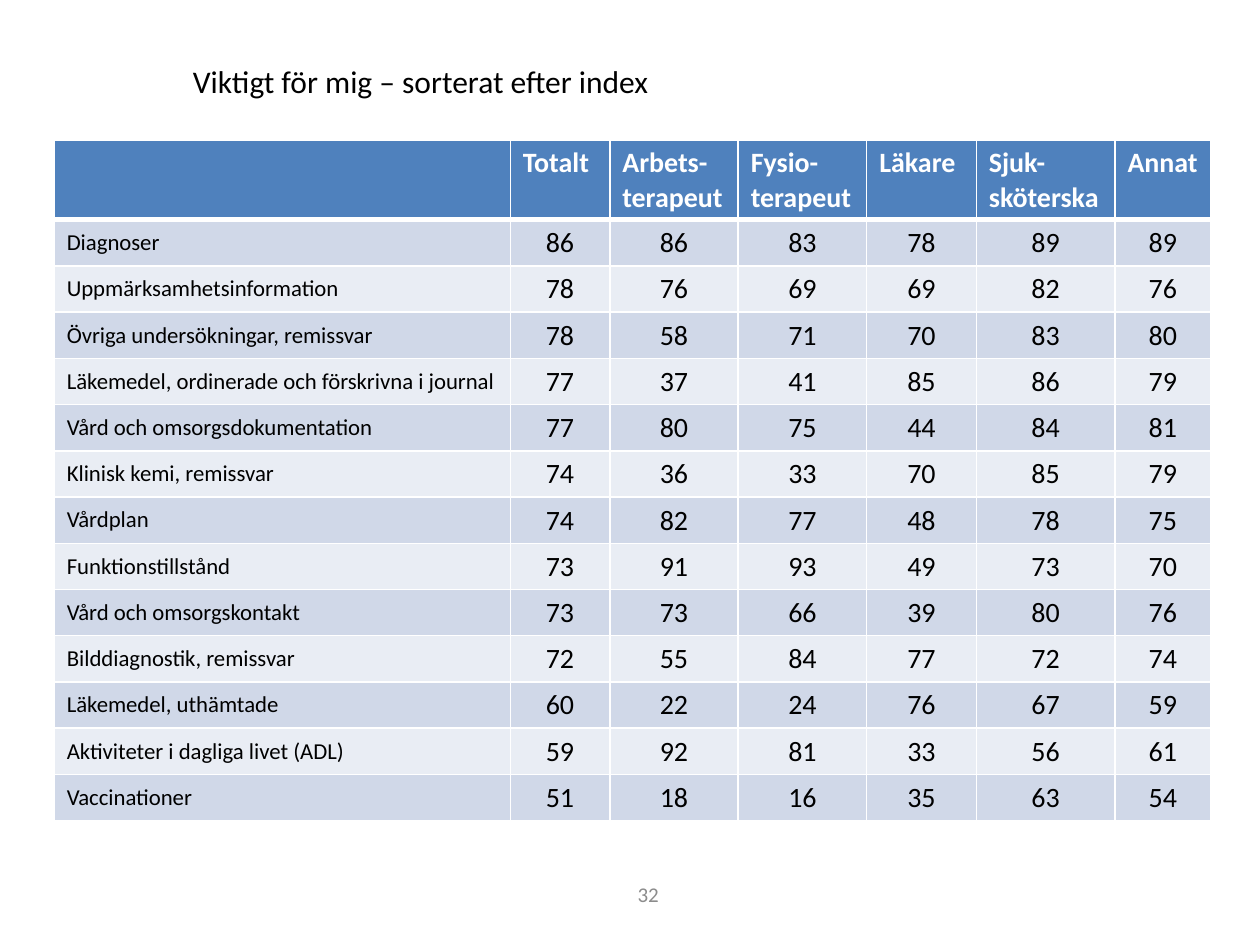
from dataclasses import dataclass

from lxml import etree
from pptx import Presentation
from pptx.dml.color import RGBColor as Rgb
from pptx.enum import text as t
from pptx.oxml import ns
from pptx.util import Inches, Pt


@dataclass(frozen=True)
class Theme:
    font: str = "Calibri"
    white: str = "FFFFFF"
    black: str = "000000"
    grey: str = "8C8C8C"
    blue: str = "4F81BD"
    bands: tuple = ("D0D8E8", "E9EDF4")
    title: float = 18
    cell: float = 16
    label: float = 13
    foot: float = 12


THEME = Theme()
LEFT, MID = t.PP_ALIGN.LEFT, t.PP_ALIGN.CENTER

HEADS = ("", "Totalt", "Arbets-terapeut", "Fysio-terapeut", "Läkare",
         "Sjuk-sköterska", "Annat")
ROWS = (
    ("Diagnoser", 86, 86, 83, 78, 89, 89),
    ("Uppmärksamhetsinformation", 78, 76, 69, 69, 82, 76),
    ("Övriga undersökningar, remissvar", 78, 58, 71, 70, 83, 80),
    ("Läkemedel, ordinerade och förskrivna i journal", 77, 37, 41, 85, 86, 79),
    ("Vård och omsorgsdokumentation", 77, 80, 75, 44, 84, 81),
    ("Klinisk kemi, remissvar", 74, 36, 33, 70, 85, 79),
    ("Vårdplan", 74, 82, 77, 48, 78, 75),
    ("Funktionstillstånd", 73, 91, 93, 49, 73, 70),
    ("Vård och omsorgskontakt", 73, 73, 66, 39, 80, 76),
    ("Bilddiagnostik, remissvar", 72, 55, 84, 77, 72, 74),
    ("Läkemedel, uthämtade", 60, 22, 24, 76, 67, 59),
    ("Aktiviteter i dagliga livet (ADL)", 59, 92, 81, 33, 56, 61),
    ("Vaccinationer", 51, 18, 16, 35, 63, 54),
)
WIDTHS = (3.62, 0.79, 1.02, 1.02, 0.87, 1.1, 0.76)
HIGH, HEAD = 5.4, 0.63  # whole table, heading row


def write(frame, words, size, color, align=LEFT, bold=False):
    frame.text = words
    para = frame.paragraphs[0]
    para.alignment = align
    for font in [para.font] + [run.font for run in para.runs]:
        font.name, font.size, font.bold = THEME.font, Pt(size), bold
        font.color.rgb = Rgb.from_string(color)


def place(shape, left, top, width, height):
    shape.left, shape.top = Inches(left), Inches(top)
    shape.width, shape.height = Inches(width), Inches(height)


def border(cell, side, points):
    props = cell._tc.get_or_add_tcPr()
    line = etree.SubElement(props, ns.qn(f"a:ln{side}"), w=str(Pt(points)))
    fill = etree.SubElement(line, ns.qn("a:solidFill"))
    etree.SubElement(fill, ns.qn("a:srgbClr"), val=THEME.white)


def style(cell, fill, top=1, bottom=1):
    # Borders come before the fill in the cell properties
    for side, points in zip("LRTB", (1, 1, top, bottom)):
        border(cell, side, points)
    cell.fill.solid()
    cell.fill.fore_color.rgb = Rgb.from_string(fill)


def add_title(slide, words):
    title = slide.shapes.title
    place(title, 1.43, 0.44, 7.32, 0.4)
    frame = title.text_frame
    write(frame, words, THEME.title, THEME.black)
    frame.vertical_anchor = t.MSO_ANCHOR.TOP
    frame.auto_size = t.MSO_AUTO_SIZE.SHAPE_TO_FIT_TEXT


def add_scores(slide):
    frame = slide.shapes.add_table(
        len(ROWS) + 1, len(HEADS), Inches(0.43), Inches(1.11),
        Inches(sum(WIDTHS)), Inches(HIGH))
    table = frame.table
    for col, width in zip(table.columns, WIDTHS):
        col.width = Inches(width)
    for i, row in enumerate(table.rows):
        row.height = Inches((HIGH - HEAD) / len(ROWS) if i else HEAD)

    # Heading row
    for j, words in enumerate(HEADS):
        cell = table.cell(0, j)
        style(cell, THEME.blue, bottom=3)
        write(cell.text_frame, words, THEME.cell, THEME.white, bold=True)

    # Banded rows: a label, then the scores
    for i, row in enumerate(ROWS, 1):
        for j, value in enumerate(row):
            cell = table.cell(i, j)
            style(cell, THEME.bands[(i - 1) % 2], top=3 if i == 1 else 1)
            cell.vertical_anchor = t.MSO_ANCHOR.MIDDLE
            write(cell.text_frame, str(value),
                  THEME.cell if j else THEME.label, THEME.black,
                  MID if j else LEFT)


def add_number(slide, words):
    box = slide.shapes.add_textbox(0, 0, 0, 0)
    place(box, 3.98, 6.9, 2.33, 0.4)
    frame = box.text_frame
    frame.word_wrap = True
    frame.vertical_anchor = t.MSO_ANCHOR.MIDDLE
    write(frame, words, THEME.foot, THEME.grey, MID)


def main():
    deck = Presentation()
    deck.slide_width, deck.slide_height = Inches(10), Inches(7.5)
    slide = deck.slides.add_slide(deck.slide_layouts.get_by_name("Title Only"))
    add_number(slide, "32")
    add_title(slide, "Viktigt för mig – sorterat efter index")
    add_scores(slide)
    deck.save("out.pptx")


if __name__ == "__main__":
    main()
